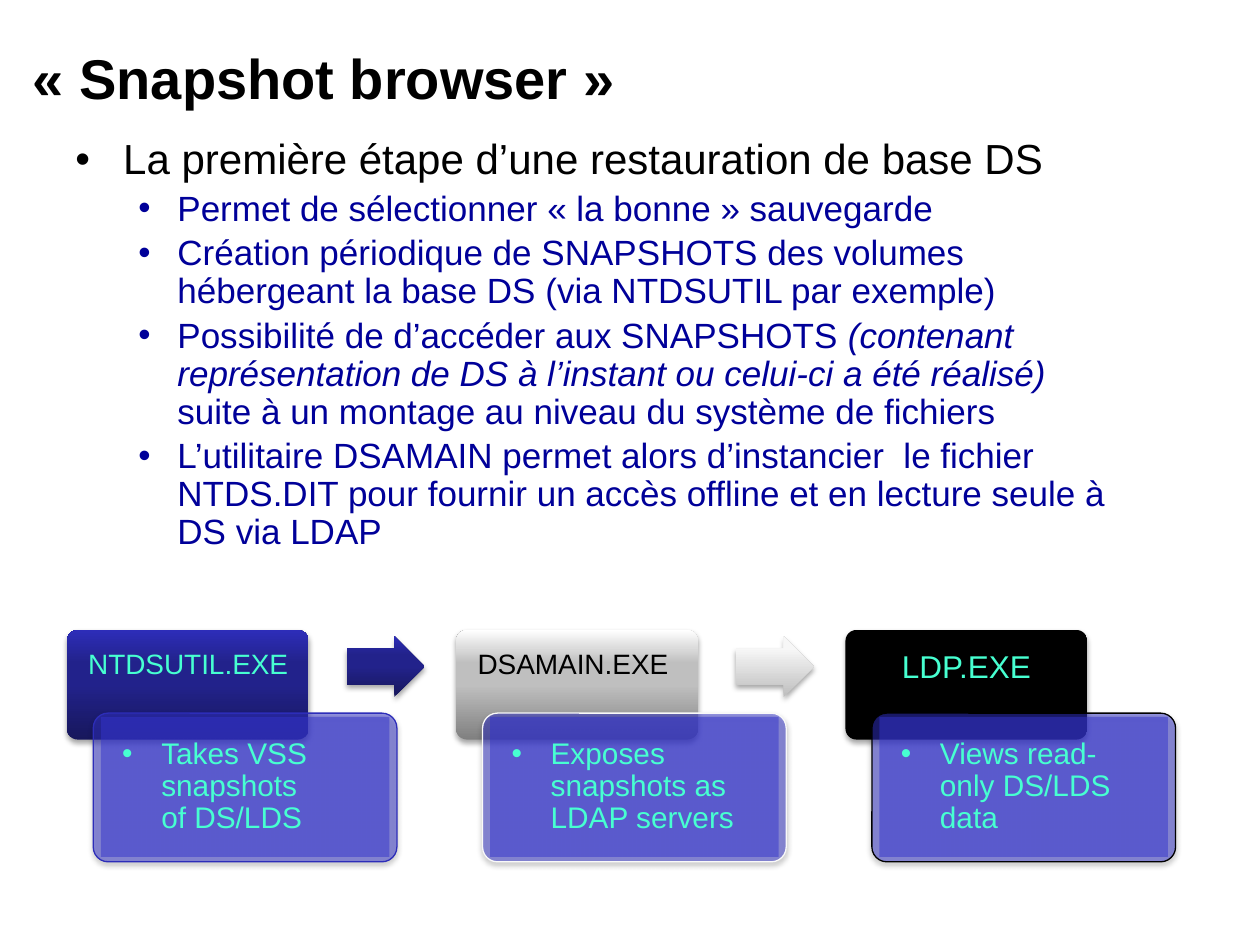
from typing import NamedTuple, Optional

from lxml.etree import SubElement
from pptx import Presentation
from pptx.dml.color import RGBColor
from pptx.enum.shapes import MSO_SHAPE as Preset
from pptx.enum.text import MSO_ANCHOR as Anchor, PP_ALIGN as Align
from pptx.oxml.ns import qn
from pptx.util import Inches, Pt

COLORS = {"black": "000000", "navy": "000099", "panel": "3333CC",
          "mint": "47FFD1", "blue": "2D2DB9", "light": "F9F9F9"}
BLUE_STOPS = [(0, "17175C"), (50, "22228B"), (70, "22228B"), (100, "2D2DB9")]
GRAY_STOPS = [(0, "808080"), (50, "BFBFBF"), (70, "BFBFBF"), (100, "FFFFFF")]
PALE_STOPS = [(0, "BEBEBE"), (80, "F7F7F7"), (100, "F8F8F8")]
BLACK_STOPS = [(0, "000000"), (100, "000000")]


class Step(NamedTuple):
    tool: str
    detail: str
    stops: list
    outline: str
    text_color: str = "mint"
    size: int = 16
    align: Align = Align.LEFT
    label_width: float = 1.92
    arrow_stops: Optional[list] = None


class Bullet(NamedTuple):
    runs: list  # (text, italic) pairs
    size: int = 20
    color: str = "navy"
    margin: float = 0.81
    hanging: float = 0.31


STEPS = [
    Step("NTDSUTIL.EXE", "Takes VSS snapshots \vof DS/LDS", BLUE_STOPS, "blue",
         label_width=1.96, arrow_stops=BLUE_STOPS),
    Step("DSAMAIN.EXE", "Exposes snapshots as LDAP servers", GRAY_STOPS, "light",
         text_color="black", arrow_stops=PALE_STOPS),
    Step("LDP.EXE", "Views read-only DS/LDS data", BLACK_STOPS, "black",
         size=18, align=Align.CENTER),
]
BULLETS = [
    Bullet([("La première étape d’une restauration de base DS", False)],
           24, "black", 0.38, 0.38),
    Bullet([("Permet de sélectionner « la bonne » sauvegarde", False)]),
    Bullet([("Création périodique de SNAPSHOTS des volumes hébergeant "
             "la base DS (via NTDSUTIL par exemple)", False)]),
    Bullet([("Possibilité de d’accéder aux SNAPSHOTS ", False),
            ("(contenant représentation de DS à l’instant ou celui-ci a été réalisé) ", True),
            ("suite à un montage au niveau du système de fichiers", False)]),
    Bullet([("L’utilitaire DSAMAIN permet alors d’instancier  le fichier NTDS.DIT "
             "pour fournir un accès offline et en lecture seule à DS via LDAP", False)]),
]


def rgb(name: str) -> RGBColor:
    return RGBColor.from_string(COLORS[name])


def place(shape, left: float, top: float, width: float, height: float) -> None:
    values = {"left": left, "top": top, "width": width, "height": height}
    for name, value in values.items():
        setattr(shape, name, Inches(value))


def format_runs(paragraph, size: int, color: str, **extra) -> None:
    values = {"size": Pt(size), "name": "Arial", **extra}
    for run in paragraph.runs:
        for name, value in values.items():
            setattr(run.font, name, value)
        run.font.color.rgb = rgb(color)


def set_frame(frame, left: float, top: float, right: float, bottom: float) -> None:
    values = {"margin_left": Inches(left), "margin_top": Inches(top),
              "margin_right": Inches(right), "margin_bottom": Inches(bottom),
              "word_wrap": True, "vertical_anchor": Anchor.TOP}
    for name, value in values.items():
        setattr(frame, name, value)


def add_bullet(paragraph, margin: float, hanging: float) -> None:
    properties = paragraph._p.get_or_add_pPr()
    properties.set("marL", str(Inches(margin)))
    properties.set("indent", str(-Inches(hanging)))
    SubElement(properties, qn("a:buFont"), typeface="Arial")
    SubElement(properties, qn("a:buChar"), char="•")


def fill_gradient(shape, stops: list) -> None:
    """Fill from bottom to top with (percent, hex) stops."""
    shape.fill.gradient()
    gradient = shape._element.spPr.find(qn("a:gradFill"))
    for child in list(gradient):
        gradient.remove(child)
    stop_list = SubElement(gradient, qn("a:gsLst"))
    for percent, color in stops:
        stop = SubElement(stop_list, qn("a:gs"), pos=str(percent * 1000))
        SubElement(stop, qn("a:srgbClr"), val=color)
    SubElement(gradient, qn("a:lin"), ang=str(270 * 60000), scaled="0")


def fill_panel(shape) -> None:
    shape.fill.solid()
    shape.fill.fore_color.rgb = rgb("panel")
    color = shape._element.spPr.find(qn("a:solidFill"))[0]
    SubElement(color, qn("a:alpha"), val="50000")


def add_preset(slide, preset: Preset, box: tuple, *adjustments: float):
    shape = slide.shapes.add_shape(preset, *map(Inches, box))
    for index, value in enumerate(adjustments):
        shape.adjustments[index] = value
    shape.line.fill.background()
    shape.shadow.inherit = False
    return shape


def add_shadow(shape) -> None:
    effects = shape._element.spPr.find(qn("a:effectLst"))
    shadow = SubElement(effects, qn("a:outerShdw"), blurRad=str(Pt(3.1)),
                        dist=str(Pt(1.8)), dir=str(90 * 60000), rotWithShape="0")
    color = SubElement(shadow, qn("a:srgbClr"), val=COLORS["black"])
    SubElement(color, qn("a:alpha"), val="35000")


def add_step(slide, step: Step, left: float) -> None:
    header = add_preset(slide, Preset.ROUNDED_RECTANGLE, (left, 5, 1.92, 0.87), 0.1)
    fill_gradient(header, step.stops)
    add_shadow(header)

    label = slide.shapes.add_textbox(*map(Inches, (left, 5, step.label_width, 0.58)))
    set_frame(label.text_frame, 0.17, 0.17, 0.17, 0.09)
    paragraph = label.text_frame.paragraphs[0]
    paragraph.text = step.tool
    paragraph.alignment = step.align
    paragraph.line_spacing = 0.9
    format_runs(paragraph, step.size, step.text_color)

    panel = add_preset(slide, Preset.ROUNDED_RECTANGLE, (left + 0.21, 5.66, 2.41, 1.18), 0.1)
    fill_panel(panel)
    panel.line.color.rgb = rgb(step.outline)
    panel.line.width = Pt(0.75)
    add_shadow(panel)

    detail = add_preset(slide, Preset.RECTANGLE, (left + 0.27, 5.69, 2.29, 1.11))
    fill_panel(detail)
    set_frame(detail.text_frame, 0.17, 0.17, 0.17, 0.17)
    paragraph = detail.text_frame.paragraphs[0]
    paragraph.text = step.detail
    paragraph.alignment = Align.LEFT
    paragraph.line_spacing = 0.9
    add_bullet(paragraph, 0.31, 0.31)
    format_runs(paragraph, 17, "mint")

    if step.arrow_stops:
        arrow = add_preset(slide, Preset.RIGHT_ARROW, (left + 2.22, 5.05, 0.62, 0.48), 0.6, 0.5)
        fill_gradient(arrow, step.arrow_stops)
        add_shadow(arrow)


def add_title(slide, text: str) -> None:
    title = slide.shapes.title
    place(title, 0.16, 0.05, 10, 1.13)
    title.text_frame.text = text
    title.text_frame.vertical_anchor = Anchor.MIDDLE
    paragraph = title.text_frame.paragraphs[0]
    paragraph.alignment = Align.LEFT
    format_runs(paragraph, 32, "black", bold=True)


def add_body(slide, bullets: list) -> None:
    frame = slide.shapes.add_textbox(*map(Inches, (0.5, 1.05, 8.5, 3.56))).text_frame
    set_frame(frame, 0.1, 0.05, 0.1, 0.05)
    for index, bullet in enumerate(bullets):
        paragraph = frame.add_paragraph() if index else frame.paragraphs[0]
        paragraph.line_spacing = 0.9
        if index:
            paragraph.space_before = Pt(bullet.size * 0.2)
        add_bullet(paragraph, bullet.margin, bullet.hanging)
        for text, italic in bullet.runs:
            run = paragraph.add_run()
            run.text = text
            run.font.italic = italic
        format_runs(paragraph, bullet.size, bullet.color)


def main() -> None:
    presentation = Presentation()
    presentation.slide_width, presentation.slide_height = Inches(10), Inches(7.5)
    slide = presentation.slides.add_slide(presentation.slide_layouts[5])
    add_title(slide, "« Snapshot browser »")
    add_body(slide, BULLETS)
    for index, step in enumerate(STEPS):
        add_step(slide, step, 0.53 + 3.09 * index)
    presentation.save("out.pptx")


if __name__ == "__main__":
    main()
